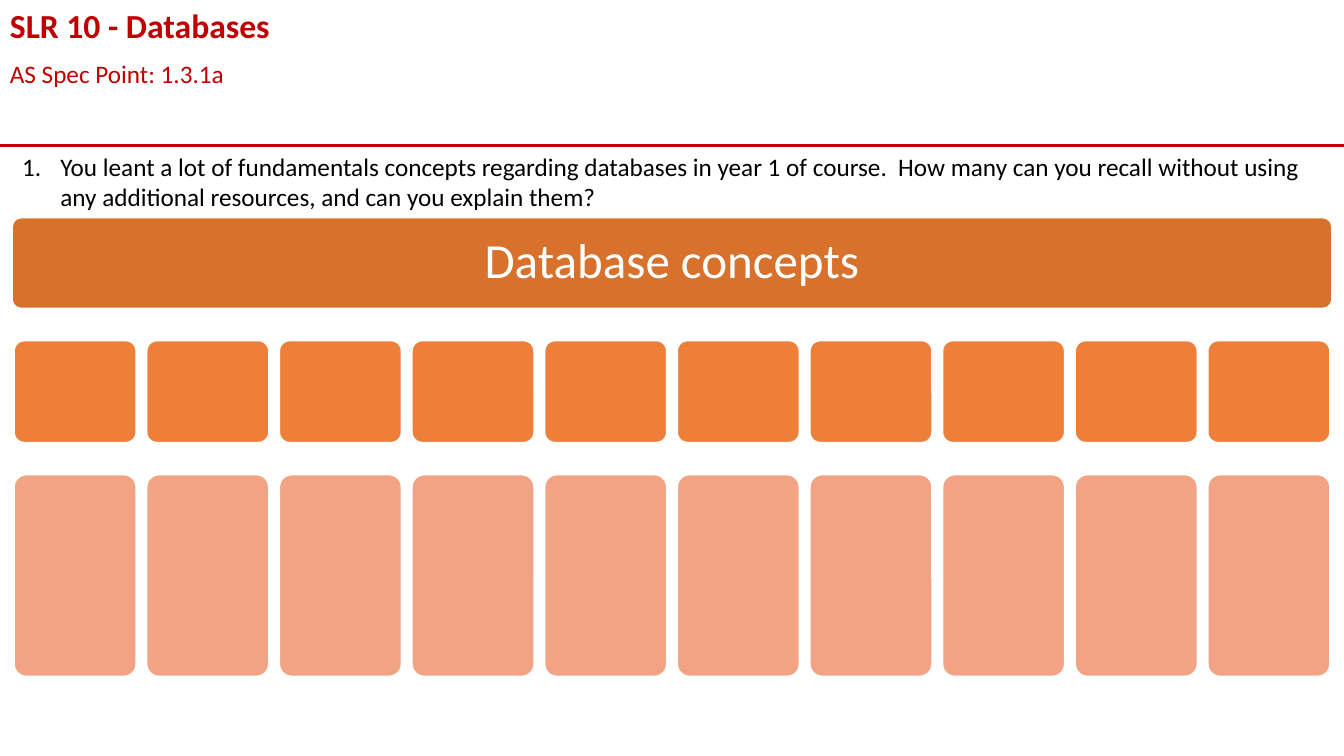
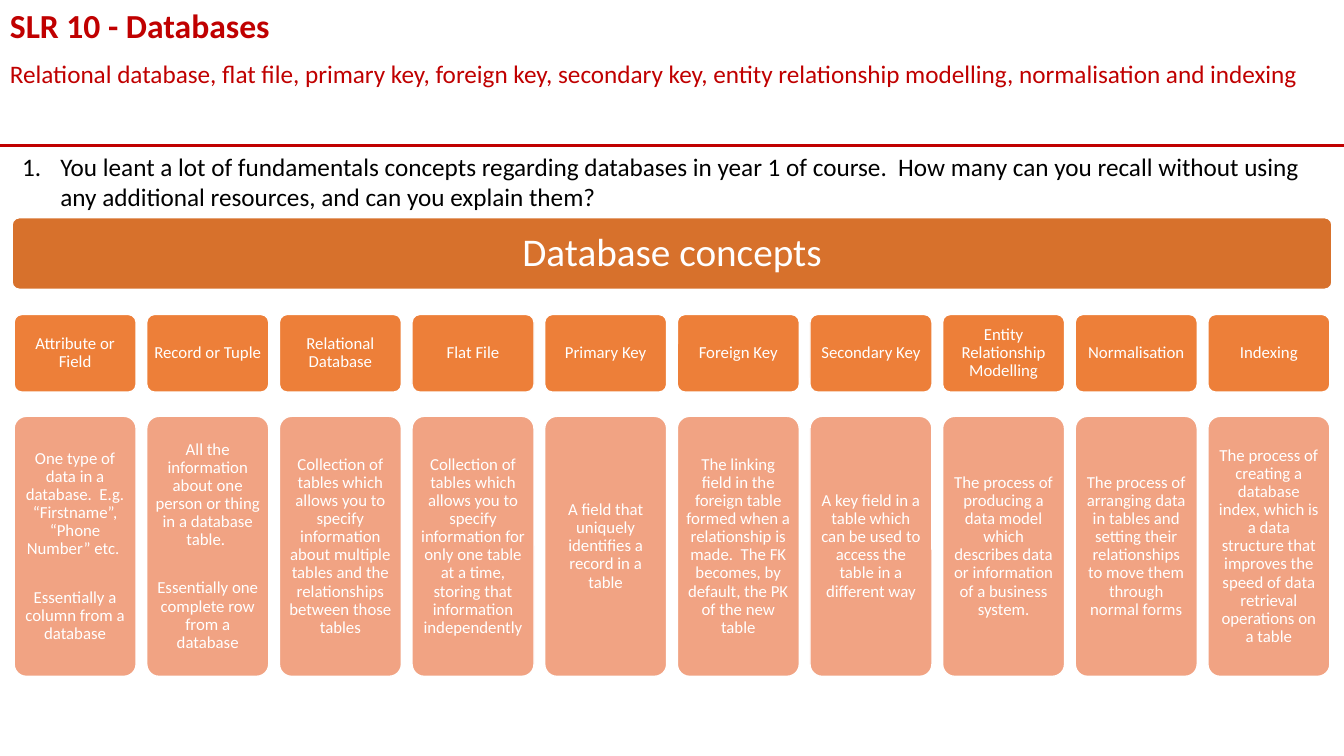
from lxml import etree
from pptx import Presentation
from pptx.dml.color import RGBColor
from pptx.enum.shapes import MSO_CONNECTOR, MSO_SHAPE
from pptx.enum.text import MSO_ANCHOR, PP_ALIGN
from pptx.oxml.ns import qn
from pptx.util import Inches, Pt

LEFT, CENTER = PP_ALIGN.LEFT, PP_ALIGN.CENTER
TOP, MIDDLE = MSO_ANCHOR.TOP, MSO_ANCHOR.MIDDLE
ROUND = MSO_SHAPE.ROUNDED_RECTANGLE
STRAIGHT = MSO_CONNECTOR.STRAIGHT

COLORS = {"red": "C00000", "black": "000000", "white": "FFFFFF",
          "dark": "D7712C", "mid": "ED7F39", "light": "F1A383"}
FONT = "Calibri"
WIDTH, HEIGHT = 13.33, 7.5

# Grid of concept columns
COUNT, START, END, BOX = 10, 0.14, 13.19, 1.21
STEP = (END - START - BOX) / (COUNT - 1)

TITLE = "SLR 10 - Databases"
TASK = ("You leant a lot of fundamentals concepts regarding databases in year 1 "
        "of course.  How many can you recall without using any additional "
        "resources, and can you explain them?")
HEADING = "Database concepts"

# Each concept: name, then the paragraphs that explain it
CONCEPTS = [
    ("Attribute or Field",
     "One type of data in a database.  E.g. “Firstname”, “Phone Number” etc. ",
     "Essentially a column from a database"),
    ("Record or Tuple",
     "All the information about one person or thing in a database table. ",
     "Essentially one complete row from a database"),
    ("Relational Database",
     "Collection of tables which allows you to specify information about "
     "multiple tables and the relationships between those tables"),
    ("Flat File",
     "Collection of tables which allows you to specify information for only "
     "one table at a time, storing that information independently"),
    ("Primary Key", "A field that uniquely identifies a record in a table"),
    ("Foreign Key",
     "The linking field in the foreign table formed when a relationship is "
     "made.  The FK becomes, by default, the PK of the new table"),
    ("Secondary Key",
     "A key field in a table which can be used to access the table in a "
     "different way"),
    ("Entity Relationship Modelling",
     "The process of producing a data model which describes data or "
     "information of a business system."),
    ("Normalisation",
     "The process of arranging data in tables and setting their "
     "relationships to move them through normal forms"),
    ("Indexing",
     "The process of creating a database index, which is a data structure "
     "that improves the speed of data retrieval operations on a table"),
]
EMPTY = [("",)] * COUNT


def color(name):
    return RGBColor.from_string(COLORS[name])


def write(frame, *texts, size=18, ink="black", bold=False, align=LEFT,
          anchor=TOP, inset=None, line=None, gap=0, number=False):
    """Fill a text frame, one paragraph for each text."""
    frame.word_wrap = True
    frame.vertical_anchor = anchor
    if inset is not None:
        frame.margin_left = frame.margin_right = Inches(inset)
        frame.margin_top = frame.margin_bottom = Inches(inset)
    for i, text in enumerate(texts):
        para = frame.add_paragraph() if i else frame.paragraphs[0]
        para.alignment = align
        if line:
            para.line_spacing = line
        if i and gap:
            para.space_before = Pt(gap)
        if number:
            props = para._p.get_or_add_pPr()
            props.set("marL", str(Inches(0.38)))
            props.set("indent", str(-Inches(0.38)))
            mark = etree.SubElement(props, qn("a:buAutoNum"))
            mark.set("type", "arabicPeriod")
        run = para.add_run()
        run.text = text
        font = run.font
        font.name, font.size, font.bold = FONT, Pt(size), bold
        font.color.rgb = color(ink)


class Deck:
    def __init__(self):
        self.prs = Presentation()
        self.prs.slide_width = Inches(WIDTH)
        self.prs.slide_height = Inches(HEIGHT)
        self.slide = None

    def page(self, topic):
        """Start a slide with its rule, title, topic and task."""
        self.slide = self.prs.slides.add_slide(self.prs.slide_layouts[6])
        self.rule(1.44)
        self.label(topic, 0, 0.53, WIDTH, 0.4, ink="red")
        self.label(TITLE, 0, 0, WIDTH, 0.5, size=24, ink="red", bold=True)
        self.label(TASK, 0.12, 1.45, 13.22, 0.71, number=True)

    def rule(self, y):
        rule = self.slide.shapes.add_connector(
            STRAIGHT, 0, Inches(y), Inches(WIDTH), Inches(y))
        rule.line.color.rgb = color("red")
        rule.line.width = Pt(2.25)
        etree.SubElement(rule._element.spPr, qn("a:effectLst"))

    def label(self, text, x, y, w, h, **style):
        box = self.slide.shapes.add_textbox(*map(Inches, (x, y, w, h)))
        write(box.text_frame, text, **style)

    def card(self, texts, x, y, w, h, fill, size=12, inset=0.05):
        card = self.slide.shapes.add_shape(ROUND, *map(Inches, (x, y, w, h)))
        card.adjustments[0] = 0.1
        card.shadow.inherit = False
        card.fill.solid()
        card.fill.fore_color.rgb = color(fill)
        card.line.color.rgb = color("white")
        card.line.width = Pt(1)
        if any(texts):
            write(card.text_frame, *texts, size=size, ink="white", align=CENTER,
                  anchor=MIDDLE, inset=inset, line=0.9, gap=21.4)

    def chart(self, concepts, size, inset, head, name, body):
        """Draw the heading over columns; head is a height, rows are (y, h)."""
        self.card([HEADING], 0.12, 2.16, 13.09, head, "dark", size, inset)
        for i, (term, *notes) in enumerate(concepts):
            x = START + i * STEP
            self.card([term], x, name[0], BOX, name[1], "mid")
            self.card(notes, x, body[0], BOX, body[1], "light")


def main():
    deck = Deck()

    # Blank grid to fill in
    deck.page("AS Spec Point: 1.3.1a")
    deck.chart(EMPTY, 35, 0.15, 0.9, (3.38, 1.01), (4.71, 2))

    # Grid with answers
    deck.page("Relational database, flat file, primary key, foreign key, "
              "secondary key, entity relationship modelling, normalisation "
              "and indexing")
    deck.chart(CONCEPTS, 28, 0.12, 0.71, (3.12, 0.77), (4.13, 2.58))

    deck.prs.save("out.pptx")


if __name__ == "__main__":
    main()
